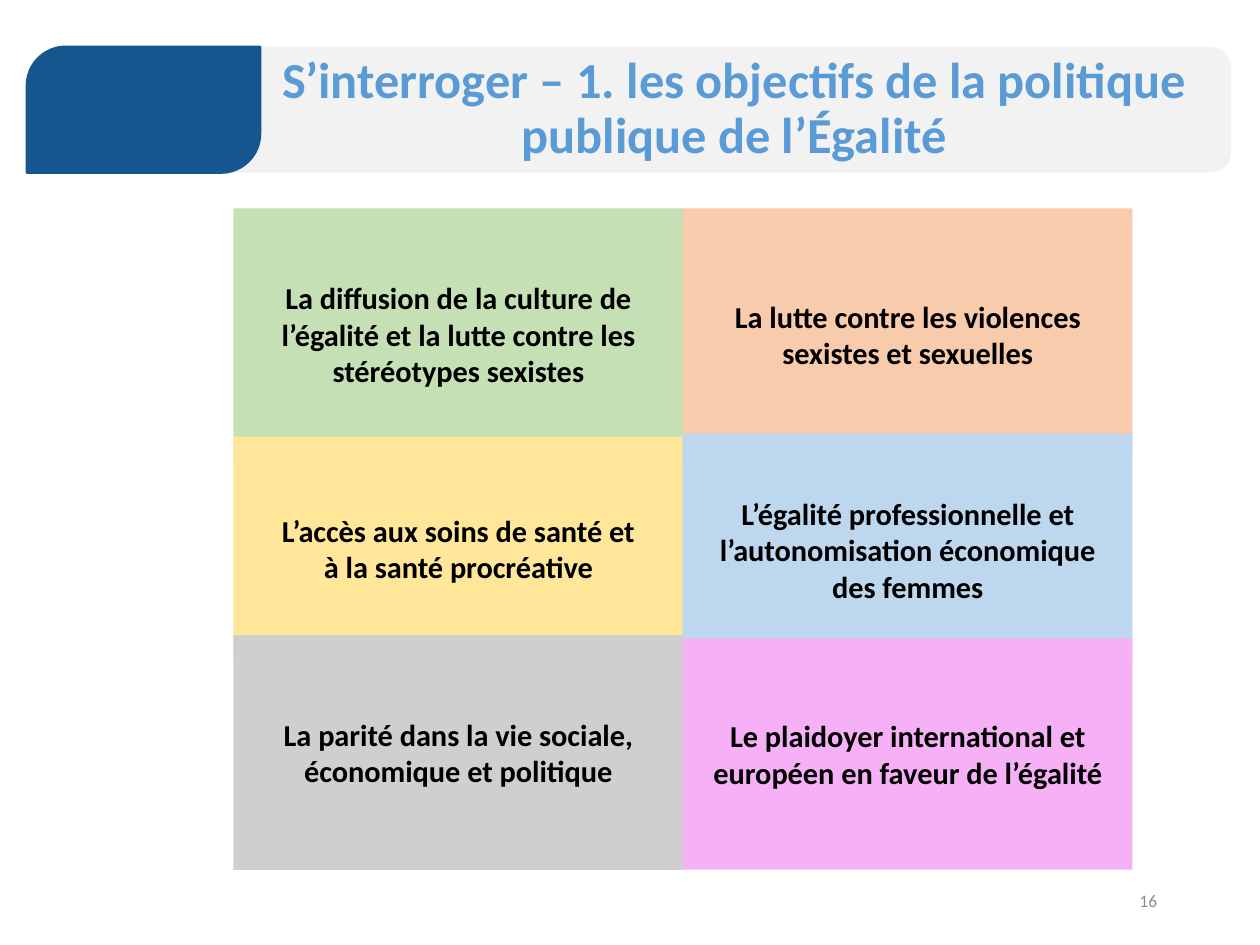
from dataclasses import dataclass

from pptx import Presentation
from pptx.dml.color import RGBColor
from pptx.enum import shapes, text
from pptx.util import Pt

TITLE = "S’interroger – 1. les objectifs de la politique publique de l’Égalité"
PAGE = "16"
GOALS = [
    [
        ("La diffusion de la culture de l’égalité et la lutte contre les stéréotypes sexistes", "C5E0B4", 89.3, 108),
        ("L’accès aux soins de santé et\nà la santé procréative", "FFE699", 187.2, 95.8),
        ("La parité dans la vie sociale, économique et politique", "D0CECE", 272.2, 100.6),
    ],
    [
        ("La lutte contre les violences sexistes et sexuelles", "F8CBAD", 89.3, 108),
        ("L’égalité professionnelle et l’autonomisation économique\ndes femmes", "BDD7EE", 185.8, 99.4),
        ("Le plaidoyer international et européen en faveur de l’égalité", "F6B0F6", 273.6, 99.2),
    ],
]
GRID_LEFT, COLUMN_STEP, COLUMN_WIDTH = 100, 192.6, 192.8
HEADER_TOP, HEADER_HEIGHT = 20, 54


@dataclass
class Theme:
    font: str = "Calibri"
    band: str = "F2F2F2"
    accent: str = "15568E"
    title: str = "5B9BD5"
    body: str = "000000"
    page: str = "8C8C8C"
    title_size: float = 21.6
    body_size: float = 13
    page_size: float = 7.5


theme = Theme()


def place(sp, left, top, width, height):
    sp.left, sp.top, sp.width, sp.height = map(Pt, (left, top, width, height))


def add_block(s, kind, box, color):
    sp = s.shapes.add_shape(kind, *map(Pt, box))
    sp.shadow.inherit = False
    sp.fill.solid()
    sp.fill.fore_color.rgb = RGBColor.from_string(color)
    sp.line.fill.background()
    return sp


def write(sp, words, size, color, bold=True, align=text.PP_ALIGN.CENTER):
    tf = sp.text_frame
    tf.text = words
    tf.word_wrap = True
    tf.auto_size = text.MSO_AUTO_SIZE.NONE
    tf.vertical_anchor = text.MSO_ANCHOR.MIDDLE
    for p in tf.paragraphs:
        p.alignment = align
        for r in p.runs:
            r.font.name = theme.font
            r.font.size = Pt(size)
            r.font.bold = bold
            r.font.color.rgb = RGBColor.from_string(color)


def add_header(s):
    add_block(s, shapes.MSO_SHAPE.ROUNDED_RECTANGLE,
              (82, HEADER_TOP, 445.7, HEADER_HEIGHT), theme.band)
    tab = add_block(s, shapes.MSO_SHAPE.ROUND_2_DIAG_RECTANGLE,
                    (11.5, HEADER_TOP, 100, HEADER_HEIGHT), theme.accent)
    tab.adjustments[0] = 0.31
    tab.adjustments[1] = 0
    tab.line.color.rgb = RGBColor.from_string(theme.accent)
    tab.line.width = Pt(1)

    title = s.shapes.title
    place(title, 88.6, HEADER_TOP, 436.3, HEADER_HEIGHT)
    write(title, TITLE, theme.title_size, theme.title)
    p = title.text_frame.paragraphs[0]
    p.line_spacing = 0.9
    pPr = p._p.get_or_add_pPr()
    pPr.set("marL", str(Pt(16)))
    pPr.set("indent", "0")
    s.shapes._spTree.append(title._element)


def add_goals(s):
    for column, goals in enumerate(GOALS):
        left = GRID_LEFT + column * COLUMN_STEP
        for words, color, top, height in goals:
            sp = add_block(s, shapes.MSO_SHAPE.RECTANGLE,
                           (left, top, COLUMN_WIDTH, height), color)
            write(sp, words, theme.body_size, theme.body)


def main():
    prs = Presentation()
    prs.slide_width, prs.slide_height = Pt(540), Pt(405)
    s = prs.slides.add_slide(prs.slide_layouts[5])
    add_header(s)
    page = s.shapes.add_textbox(*map(Pt, (381.6, 375.3, 121.5, 21.6)))
    write(page, PAGE, theme.page_size, theme.page, False, text.PP_ALIGN.RIGHT)
    add_goals(s)
    prs.save("out.pptx")


if __name__ == "__main__":
    main()
